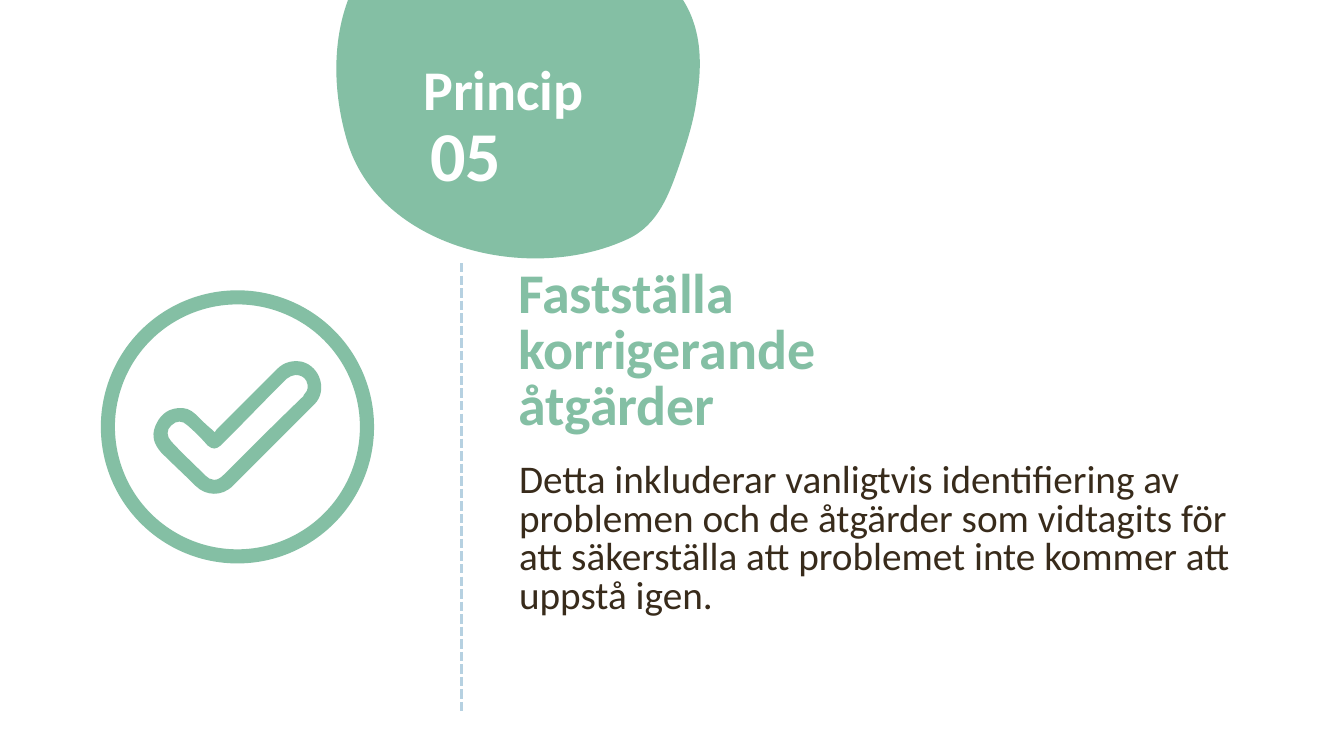
from math import cos, radians, sin

from lxml.etree import SubElement
from pptx import Presentation
from pptx.dml.color import RGBColor
from pptx.enum.dml import MSO_LINE
from pptx.enum.shapes import MSO_CONNECTOR, MSO_SHAPE
from pptx.oxml.ns import qn
from pptx.util import Inches, Pt

GREEN, BROWN, BLUE, WHITE = "84BFA4", "382B1B", "B6D1E1", "FFFFFF"

# Each outline is a start point followed by cubic curves (two controls, end)
BLOB = [
    [(6.91, 0.98),
     (6.99, 0.5, 6.94, 0.02, 6.48, -0.3), (6.03, -0.6, 5.34, -0.87, 4.79, -0.87),
     (3.53, -0.89, 3.12, 0.29, 3.44, 1.39), (3.75, 2.46, 5.25, 2.83, 6.23, 2.37),
     (6.53, 2.23, 6.64, 1.92, 6.74, 1.63), (6.81, 1.42, 6.88, 1.21, 6.91, 0.98)],
]
CHECK_MARK = [
    [(2.13, 4.29),
     (2.14, 4.28, 2.14, 4.27, 2.15, 4.26), (2.35, 4.06, 2.55, 3.86, 2.75, 3.66),
     (2.82, 3.59, 2.91, 3.57, 3, 3.59), (3.18, 3.64, 3.25, 3.88, 3.12, 4.01),
     (2.85, 4.28, 2.58, 4.55, 2.31, 4.82), (2.2, 4.93, 2.04, 4.92, 1.94, 4.82),
     (1.83, 4.71, 1.71, 4.6, 1.6, 4.49), (1.53, 4.41, 1.5, 4.33, 1.54, 4.23),
     (1.58, 4.13, 1.65, 4.06, 1.76, 4.05), (1.83, 4.04, 1.89, 4.06, 1.94, 4.11),
     (1.99, 4.16, 2.04, 4.21, 2.1, 4.26), (2.11, 4.27, 2.11, 4.28, 2.13, 4.29)],
    [(2.13, 4.76),
     (2.16, 4.76, 2.19, 4.74, 2.22, 4.71), (2.48, 4.45, 2.74, 4.19, 3.01, 3.93),
     (3.01, 3.92, 3.02, 3.91, 3.02, 3.91), (3.06, 3.87, 3.06, 3.83, 3.04, 3.78),
     (3.02, 3.74, 2.98, 3.72, 2.93, 3.72), (2.9, 3.72, 2.87, 3.74, 2.84, 3.76),
     (2.62, 3.98, 2.41, 4.2, 2.19, 4.42), (2.14, 4.46, 2.11, 4.46, 2.06, 4.42),
     (2, 4.35, 1.93, 4.28, 1.86, 4.22), (1.81, 4.17, 1.75, 4.17, 1.7, 4.22),
     (1.65, 4.26, 1.65, 4.33, 1.7, 4.38), (1.81, 4.5, 1.93, 4.61, 2.04, 4.72),
     (2.06, 4.74, 2.09, 4.76, 2.12, 4.76)],
]


def color(value):
    return RGBColor.from_string(value)


def fill_plain(shape, fill):
    shape.shadow.inherit = False
    shape.fill.solid()
    shape.fill.fore_color.rgb = color(fill)
    shape.line.fill.background()


def add_outline(slide, outlines, box, fill, rotation=0):
    """Add a freeform of cubic curves; points are as seen after rotation."""
    left, top, width, height = box
    cosine, sine = cos(radians(rotation)), sin(radians(rotation))

    def add_point(parent, x, y):
        dx, dy = x - left - width / 2, y - top - height / 2
        local_x = width / 2 + dx * cosine + dy * sine
        local_y = height / 2 - dx * sine + dy * cosine
        SubElement(parent, qn("a:pt"),
                   x=str(Inches(local_x)), y=str(Inches(local_y)))

    builder = slide.shapes.build_freeform(Inches(left), Inches(top))
    builder.add_line_segments([(Inches(left + width), Inches(top + height))])
    shape = builder.convert_to_shape()

    # Replace the straight segment with the curves
    geometry = next(shape._element.iter(qn("a:path")))
    for segment in list(geometry):
        geometry.remove(segment)
    for start, *curves in outlines:
        add_point(SubElement(geometry, qn("a:moveTo")), *start)
        for curve in curves:
            segment = SubElement(geometry, qn("a:cubicBezTo"))
            for x, y in zip(curve[::2], curve[1::2]):
                add_point(segment, x, y)
        SubElement(geometry, qn("a:close"))
    shape.rotation = rotation
    fill_plain(shape, fill)


def add_ring(slide, left, top, size, thickness, fill):
    shape = slide.shapes.add_shape(MSO_SHAPE.DONUT, Inches(left), Inches(top),
                                   Inches(size), Inches(size))
    shape.adjustments[0] = thickness / size
    fill_plain(shape, fill)


def add_dashed_line(slide, x, top, bottom, line_color):
    connector = slide.shapes.add_connector(
        MSO_CONNECTOR.STRAIGHT, Inches(x), Inches(top), Inches(x), Inches(bottom))
    connector.line.color.rgb = color(line_color)
    connector.line.width = Pt(2.25)
    connector.line.dash_style = MSO_LINE.SQUARE_DOT
    SubElement(connector._element.spPr, qn("a:effectLst"))


def add_text(slide, box, text, size, text_color, line_spacing, bold=True):
    frame = slide.shapes.add_textbox(*map(Inches, box)).text_frame
    frame.word_wrap = True
    paragraph = frame.paragraphs[0]
    paragraph.line_spacing = line_spacing
    run = paragraph.add_run()
    run.text = text
    for name, value in {"name": "Calibri", "size": Pt(size), "bold": bold}.items():
        setattr(run.font, name, value)
    run.font.color.rgb = color(text_color)


def main():
    presentation = Presentation()
    presentation.slide_width = Inches(13.33)
    presentation.slide_height = Inches(7.5)
    slide = presentation.slides.add_slide(presentation.slide_layouts[6])

    # Heading and description
    add_text(slide, (5.04, 2.61, 4.56, 1.87), "Fastställa korrigerande åtgärder",
             40, GREEN, Pt(40.2))
    add_text(slide, (5.05, 4.54, 7.29, 2.19),
             "Detta inkluderar vanligtvis identifiering av problemen och de "
             "åtgärder som vidtagits för att säkerställa att problemet inte "
             "kommer att uppstå igen.", 28, BROWN, Pt(27.6), bold=False)

    # Principle number on its blob
    add_outline(slide, BLOB, (3.4, -0.98, 3.51, 3.62), GREEN, rotation=82.8)
    add_text(slide, (4.17, 1.15, 1.26, 0.94), "05", 50, WHITE, 0.9)
    add_text(slide, (4.1, 0.62, 2.26, 0.67), "Princip", 40, WHITE, 0.8)

    # Divider
    add_dashed_line(slide, 4.58, 2.61, 7.07, BLUE)

    # Check mark icon
    add_ring(slide, 1, 2.88, 2.71, 0.14, GREEN)
    add_outline(slide, CHECK_MARK, (1.52, 3.58, 1.66, 1.32), GREEN)

    presentation.save("out.pptx")


if __name__ == "__main__":
    main()
